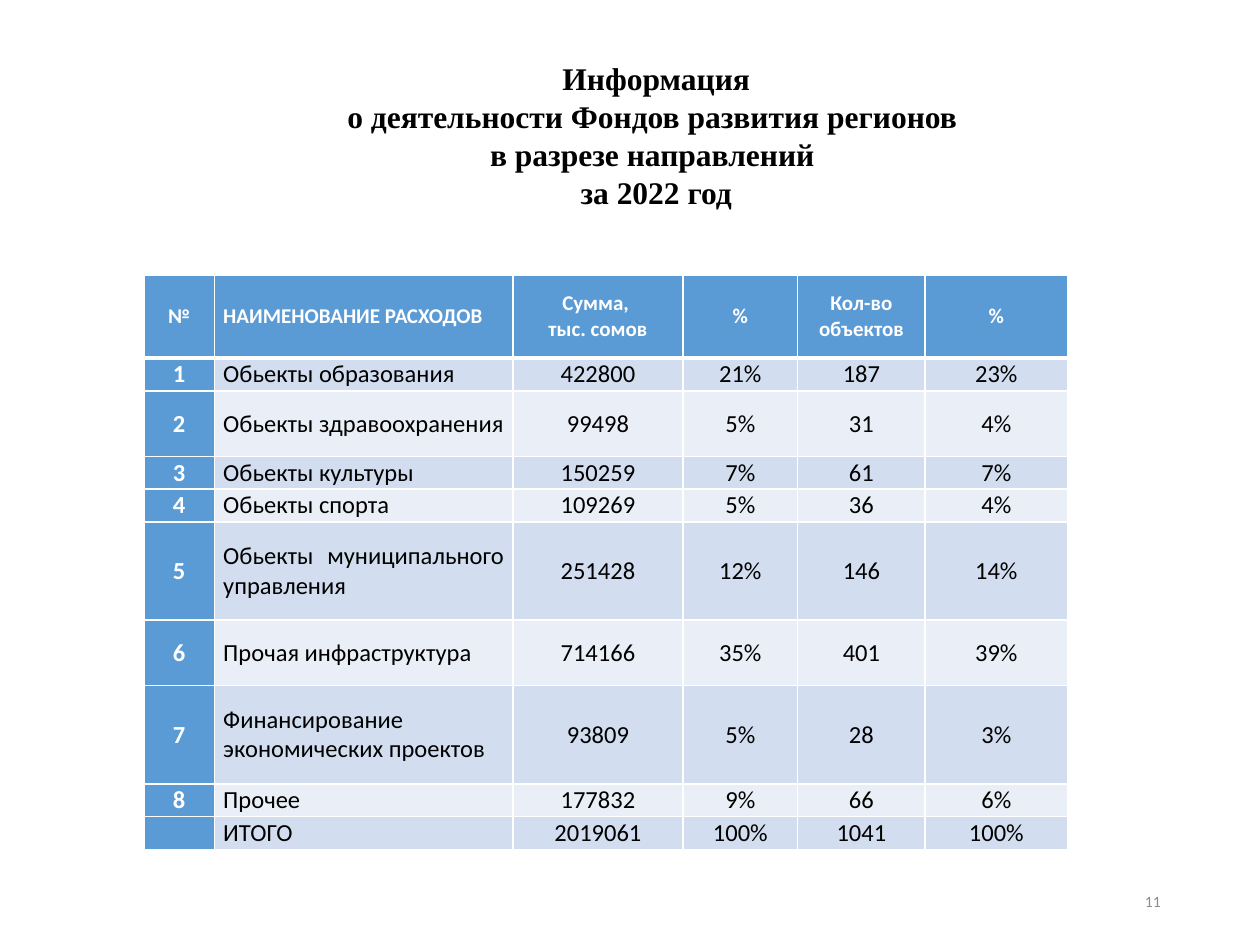
from lxml import etree
from pptx import Presentation
from pptx.dml.color import RGBColor
from pptx.enum.text import MSO_ANCHOR, PP_ALIGN
from pptx.oxml.ns import qn
from pptx.util import Cm, Pt

LEFT, MID, RIGHT, JUST = PP_ALIGN.LEFT, PP_ALIGN.CENTER, PP_ALIGN.RIGHT, PP_ALIGN.JUSTIFY
TOP, CENTER = MSO_ANCHOR.TOP, MSO_ANCHOR.MIDDLE

BLACK = RGBColor(0x00, 0x00, 0x00)
WHITE = RGBColor(0xFF, 0xFF, 0xFF)
GRAY = RGBColor(0x8C, 0x8C, 0x8C)
BLUE = RGBColor(0x5B, 0x9B, 0xD5)
BANDS = (RGBColor(0xEA, 0xEF, 0xF7), RGBColor(0xD2, 0xDE, 0xEF))

TITLE = (
    "Информация\n"
    "о деятельности Фондов развития регионов \n"
    "в разрезе направлений \n"
    "за 2022 год"
)
ROWS = [
    ("№", "НАИМЕНОВАНИЕ РАСХОДОВ", "Сумма, \nтыс. сомов", "%", "Кол-во объектов", "%"),
    ("1", "Обьекты образования", "422800", "21%", "187", "23%"),
    ("2", "Обьекты здравоохранения", "99498", "5%", "31", "4%"),
    ("3", "Обьекты культуры", "150259", "7%", "61", "7%"),
    ("4", "Обьекты спорта", "109269", "5%", "36", "4%"),
    ("5", "Обьекты муниципального управления", "251428", "12%", "146", "14%"),
    ("6", "Прочая инфраструктура", "714166", "35%", "401", "39%"),
    ("7", "Финансирование экономических проектов", "93809", "5%", "28", "3%"),
    ("8", "Прочее", "177832", "9%", "66", "6%"),
    ("", "ИТОГО", "2019061", "100%", "1041", "100%"),
]
WIDTHS = (1.42, 6.02, 3.43, 2.31, 2.57, 2.87)
HEAD = 1.68
LINE = 0.66
LINES = (1, 2, 1, 1, 3, 2, 3, 1, 1)


class Deck:
    def __init__(self, slide, font):
        self.slide = slide
        self.font = font

    def style(self, frame, size, color, align, bold=False, font=None):
        for para in frame.paragraphs:
            para.alignment = align
            for run in para.runs:
                run.font.name = font or self.font
                run.font.size = Pt(size)
                run.font.bold = bold
                run.font.color.rgb = color
            # An empty cell takes its line height from the end mark.
            etree.SubElement(para._p, qn("a:endParaRPr"), sz=str(size * 100))

    def text(self, words, box, size, color, align, anchor=CENTER, **look):
        frame = self.slide.shapes.add_textbox(*map(Cm, box)).text_frame
        frame.word_wrap = True
        frame.vertical_anchor = anchor
        frame.text = words
        self.style(frame, size, color, align, **look)

    def border(self, cell, top, base):
        """Draw white cell borders; top and base are widths in points."""
        props = cell._tc.get_or_add_tcPr()
        for side, width in (("L", 1), ("R", 1), ("T", top), ("B", base)):
            line = etree.SubElement(props, qn(f"a:ln{side}"), w=str(Pt(width)))
            fill = etree.SubElement(line, qn("a:solidFill"))
            etree.SubElement(fill, qn("a:srgbClr"), val=str(WHITE))

    def cell(self, cell, words, row, col):
        head, key = row == 0, row == 0 or col == 0
        cell.text = words
        cell.vertical_anchor = CENTER
        cell.margin_left = cell.margin_right = Cm(0.18)
        cell.margin_top = cell.margin_bottom = 0
        self.border(cell, 3 if row == 1 else 1, 3 if head else 1)
        cell.fill.solid()
        cell.fill.fore_color.rgb = BLUE if key else BANDS[row % 2]
        self.style(cell.text_frame, 12 if head else 14, WHITE if key else BLACK,
                   JUST if col == 1 else MID, bold=key)

    def table(self, rows, left, top, widths, heights):
        box = map(Cm, (left, top, sum(widths), sum(heights)))
        grid = self.slide.shapes.add_table(len(rows), len(widths), *box).table
        for col, width in zip(grid.columns, widths):
            col.width = Cm(width)
        for line, height in zip(grid.rows, heights):
            line.height = Cm(height)
        for r, line in enumerate(rows):
            for c, words in enumerate(line):
                self.cell(grid.cell(r, c), words, r, c)


def main():
    show = Presentation()
    show.slide_width, show.slide_height = Cm(25.4), Cm(19.05)
    deck = Deck(show.slides.add_slide(show.slide_layouts[6]), "Calibri")
    heights = [HEAD] + [LINE * n for n in LINES]
    deck.table(ROWS, 2.9, 5.54, WIDTHS, heights)
    deck.text(TITLE, (4.57, 1.07, 17.32, 4.11), 18, BLACK, MID, TOP,
              bold=True, font="Times New Roman")
    deck.text("11", (17.93, 17.65, 5.72, 1.02), 9, GRAY, RIGHT)
    show.save("out.pptx")


if __name__ == "__main__":
    main()
